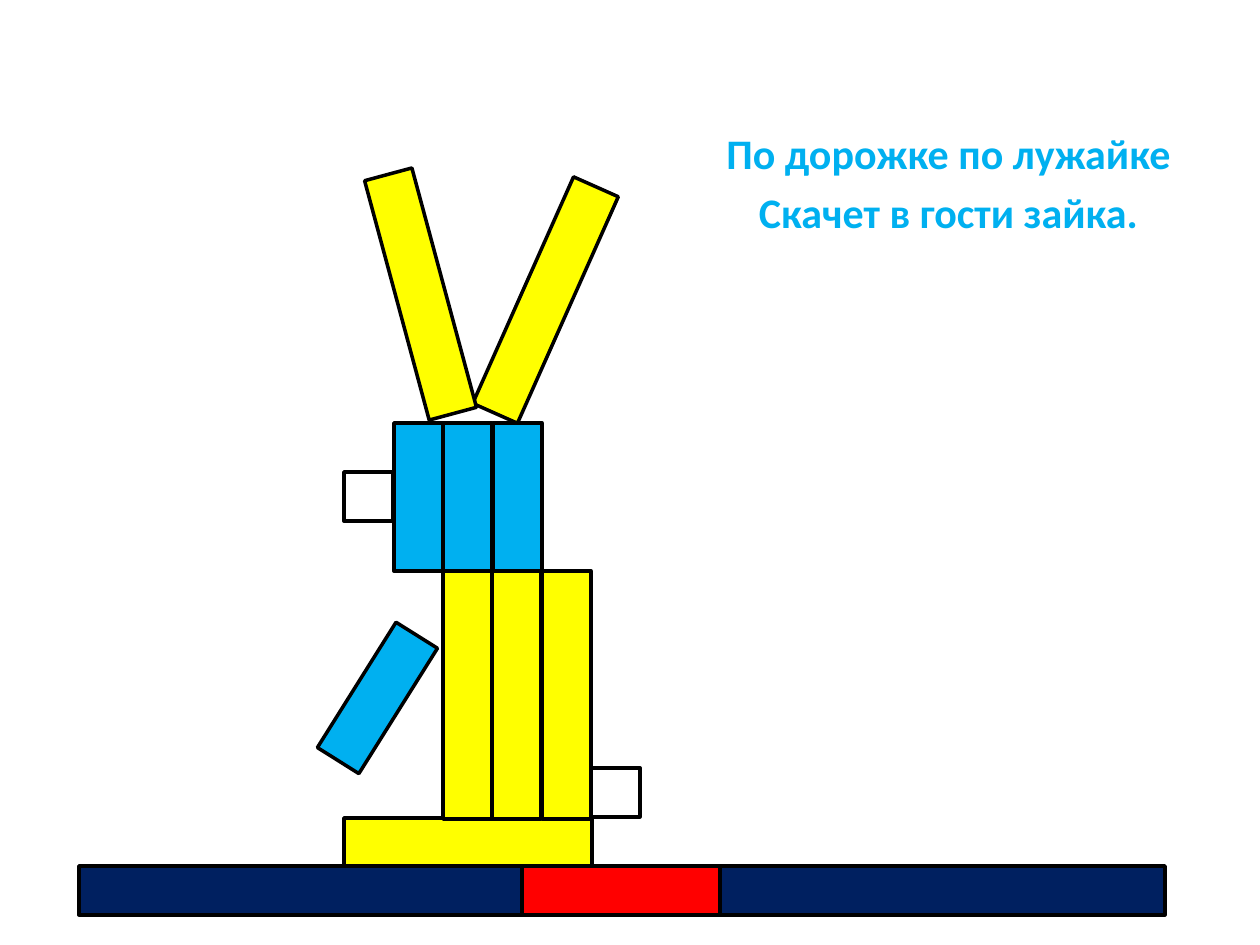
import pptx
import pptx.dml.color
import pptx.enum.shapes
import pptx.enum.text
import pptx.util
from lxml import etree

EMU_PER_PX = 914400 / 126
YELLOW, BLUE, NAVY, RED, WHITE, BLACK = (
    "FFFF00", "00B0F0", "002060", "FF0000", "FFFFFF", "000000")
UNIT = 49       # thickness of every block
LONG = 248      # long blocks: base, body, ears
SHORT = 148     # short blocks: head, arm


def px(length):
    return pptx.util.Emu(round(length * EMU_PER_PX))


def color(hex_string):
    return pptx.dml.color.RGBColor.from_string(hex_string)


deck = pptx.Presentation()
deck.slide_width = px(1260)
deck.slide_height = px(945)
page = deck.slides.add_slide(deck.slide_layouts[1])
title = page.shapes.title
title.element.getparent().remove(title.element)

# Rhyme
box = page.placeholders[1]
box.left, box.top, box.width, box.height = px(709), px(121), px(479), px(161)
frame = box.text_frame
frame.word_wrap = True
frame.auto_size = pptx.enum.text.MSO_AUTO_SIZE.NONE
frame.vertical_anchor = pptx.enum.text.MSO_ANCHOR.TOP
for index, line in enumerate(["По дорожке по лужайке", "Скачет в гости зайка."]):
    para = frame.paragraphs[0] if index == 0 else frame.add_paragraph()
    para.alignment = pptx.enum.text.PP_ALIGN.CENTER
    para.space_before = pptx.util.Pt(5 if index else 0)
    properties = para._p.get_or_add_pPr()
    properties.set("marL", "0")
    properties.set("indent", "0")
    etree.SubElement(properties, pptx.oxml.ns.qn("a:buNone"))
    span = para.add_run()
    span.text = line
    span.font.name = "Calibri"
    span.font.size = pptx.util.Pt(24)
    span.font.bold = True
    span.font.color.rgb = color(BLUE)

# Blocks, back to front: left, top, width, height, rotation, fill
columns = [443, 492, 542]
blocks = [(344, 818, LONG, UNIT, 0, YELLOW)]                        # base
blocks += [(left, 571, UNIT, LONG, 0, YELLOW) for left in columns]  # body
blocks.append((591, 768, UNIT, UNIT, 0, WHITE))                     # tail
blocks += [(left - UNIT, 423, UNIT, SHORT, 0, BLUE)
           for left in reversed(columns)]                           # head
blocks += [
    (353, 624, UNIT, SHORT, 32.1, BLUE),    # arm
    (521, 176, UNIT, LONG, 204, YELLOW),    # right ear
    (396, 170, UNIT, LONG, 164.9, YELLOW),  # left ear
    (344, 472, UNIT, UNIT, 0, WHITE),       # nose
    (79, 866, 446, UNIT, 0, NAVY),          # path, left
    (719, 866, 446, UNIT, 0, NAVY),         # path, right
    (522, 866, 198, UNIT, 0, RED),          # path, middle
]
for left, top, width, height, rotation, fill in blocks:
    block = page.shapes.add_shape(
        pptx.enum.shapes.MSO_SHAPE.RECTANGLE,
        px(left), px(top), px(width), px(height))
    block.rotation = rotation
    block.shadow.inherit = False
    block.fill.solid()
    block.fill.fore_color.rgb = color(fill)
    block.line.color.rgb = color(BLACK)
    block.line.width = pptx.util.Pt(2)

deck.save("out.pptx")
